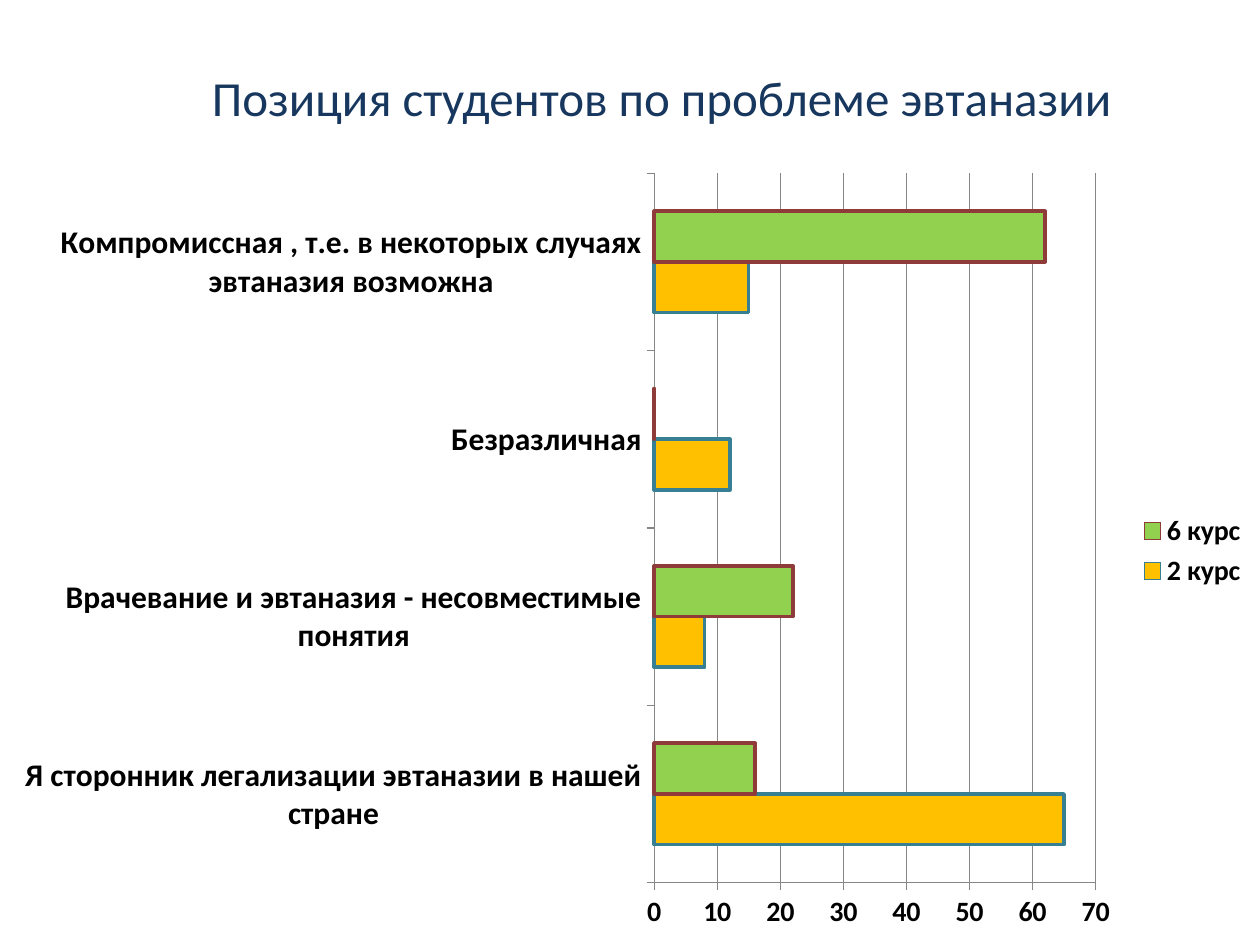
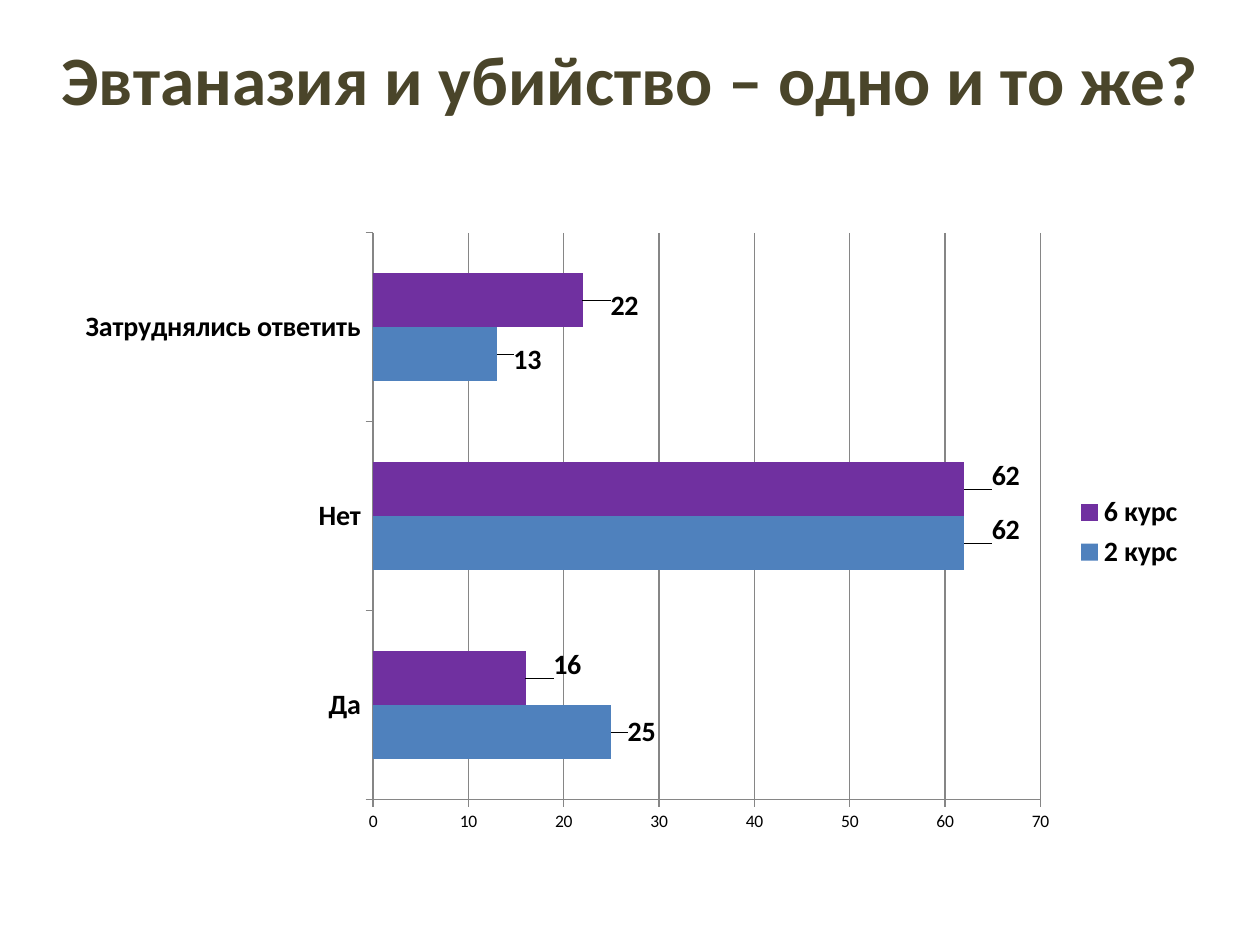
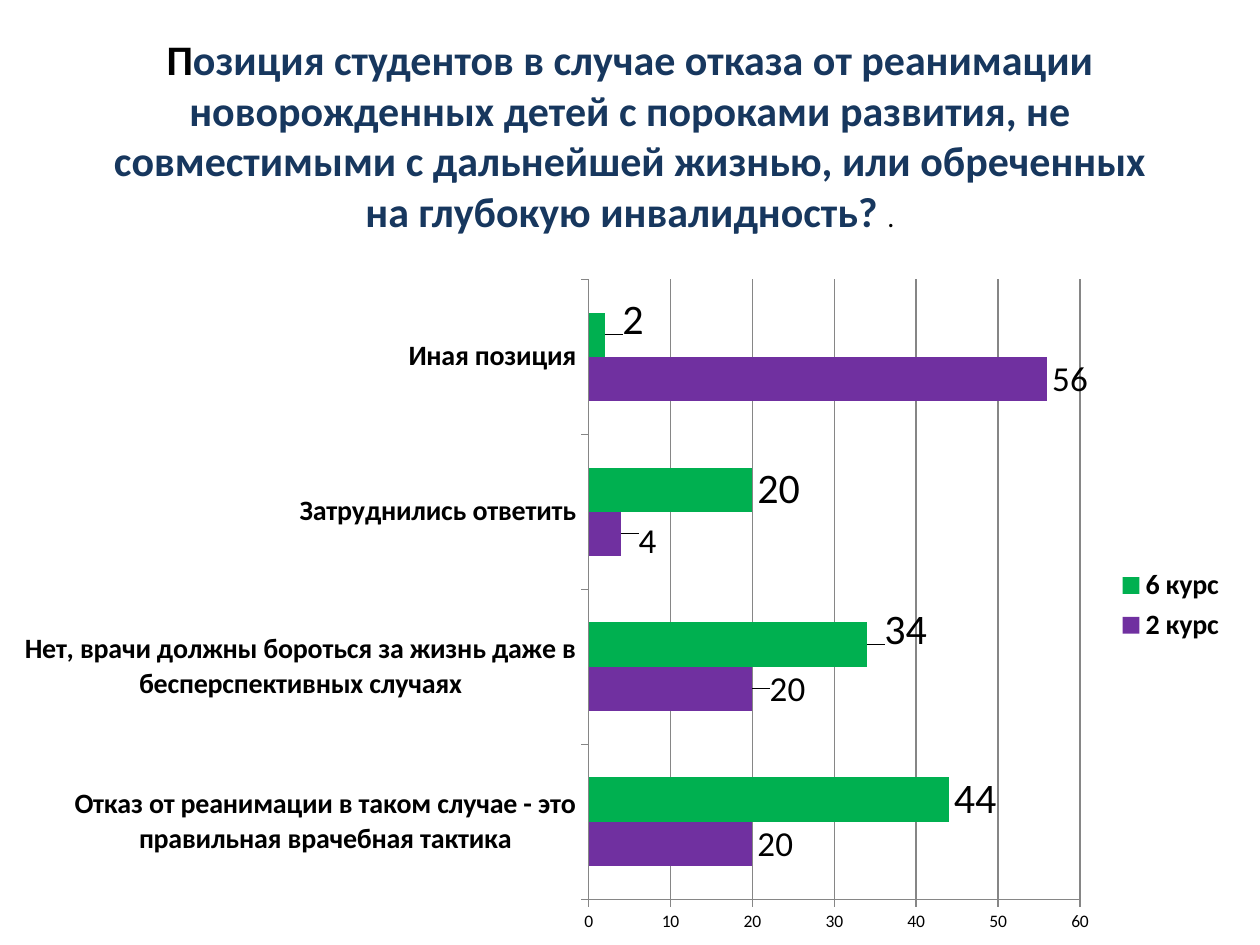
from lxml import etree
from pptx import Presentation
from pptx.chart.data import CategoryChartData
from pptx.dml.color import RGBColor
from pptx.enum import chart as chart_enum, text as text_enum
from pptx.oxml.ns import qn
from pptx.util import Inches, Pt

FONT = "Calibri"
COLORS = {
    "black": "000000", "navy": "17375E", "olive": "4A452A", "grid": "868686",
    "amber": "FFC000", "lime": "92D050", "teal": "377F92", "maroon": "8E3B39",
    "blue": "4F81BD", "purple": "7030A0", "green": "00B050",
}
SECOND_YEAR, SIXTH_YEAR = "2 курс", "6 курс"
PLAIN_AXIS = dict(size=10, bold=False)
LEGEND_FONT = dict(size=16, bold=True)

# Boxes are (left, top, width, height) in inches.
# Label shifts map a point index to (x, y) as fractions of the chart size.
SLIDES = [
    dict(
        title_box=(0.5, 0.31, 9.5, 0.92),
        title=[("Позиция студентов по проблеме эвтаназии",
                dict(size=28, bold=False, color="navy"))],
        chart_box=(0, 1.25, 10, 6.25),
        category_font=dict(size=18, bold=True),
        value_font=dict(size=16, bold=True),
        categories=["Я сторонник легализации эвтаназии в нашей стране",
                    "Врачевание и эвтаназия - несовместимые понятия",
                    "Безразличная",
                    "Компромиссная , т.е. в некоторых случаях эвтаназия возможна"],
        series=[dict(name=SECOND_YEAR, values=(65, 8, 12, 15), fill="amber", line="teal"),
                dict(name=SIXTH_YEAR, values=(16, 22, 0, 62), fill="lime", line="maroon")],
    ),
    dict(
        title_box=(0, 0.16, 10, 0.92),
        title=[("Эвтаназия и убийство – одно и то же?",
                dict(size=39.6, bold=True, color="olive"))],
        chart_box=(0.5, 1.75, 9, 4.95),
        category_font=dict(size=16, bold=True),
        value_font=PLAIN_AXIS,
        categories=["Да", "Нет", "Затруднялись ответить"],
        series=[dict(name=SECOND_YEAR, values=(25, 62, 13), fill="blue",
                     label_font=dict(size=16, bold=True),
                     shifts={0: (0.01, 0), 1: (0.02, -0.02), 2: (0.01, 0.01)}),
                dict(name=SIXTH_YEAR, values=(16, 62, 22), fill="purple",
                     label_font=dict(size=16, bold=True),
                     shifts={0: (0.02, -0.02), 1: (0.02, -0.02), 2: (0.02, 0.01)})],
    ),
    dict(
        title_box=(0.67, 0.21, 8.66, 1.72),
        title=[("П", dict(size=24, bold=True, color="black")),
               ("озиция студентов в случае отказа от реанимации новорожденных детей "
                "с пороками развития, не совместимыми с дальнейшей жизнью, или "
                "обреченных на глубокую инвалидность? ",
                dict(size=24, bold=True, color="navy")),
               (".", dict(size=16, bold=False, color="black"))],
        chart_box=(0, 2.11, 9.83, 5.39),
        category_font=dict(size=16, bold=True),
        value_font=PLAIN_AXIS,
        categories=["Отказ от реанимации в таком случае - это правильная врачебная тактика",
                    "Нет, врачи должны бороться за жизнь даже в бесперспективных случаях",
                    "Затруднились ответить",
                    "Иная позиция"],
        series=[dict(name=SECOND_YEAR, values=(20, 20, 4, 56), fill="purple",
                     label_font=dict(size=20, bold=False),
                     shifts={1: (0.01, 0), 2: (0.01, 0.01)}),
                dict(name=SIXTH_YEAR, values=(44, 34, 20, 2), fill="green",
                     label_font=dict(size=24, bold=False),
                     shifts={1: (0.01, -0.02), 3: (0.01, -0.02)})],
    ),
]


def rgb(name):
    return RGBColor.from_string(COLORS[name])


def format_font(font, size, bold, color="black"):
    for attribute, value in dict(name=FONT, size=Pt(size), bold=bold).items():
        setattr(font, attribute, value)
    font.color.rgb = rgb(color)


def add_title(slide, box, runs):
    title = slide.shapes.title
    title.left, title.top, title.width, title.height = map(Inches, box)
    frame = title.text_frame
    frame.word_wrap = True
    frame.auto_size = text_enum.MSO_AUTO_SIZE.NONE
    frame.vertical_anchor = text_enum.MSO_ANCHOR.MIDDLE
    paragraph = frame.paragraphs[0]
    paragraph.alignment = text_enum.PP_ALIGN.CENTER
    for words, style in runs:
        run = paragraph.add_run()
        run.text = words
        format_font(run.font, **style)


def shift_label(series, index, shift):
    """Move one data label away from its default place at the bar end."""
    label = series._element.xpath(f'c:dLbls/c:dLbl[c:idx/@val="{index}"]')[0]
    layout = etree.Element(qn("c:layout"))
    manual = etree.SubElement(layout, qn("c:manualLayout"))
    for axis, distance in zip("xy", shift):
        etree.SubElement(manual, qn(f"c:{axis}"), val=str(distance))
    label.insert(1, layout)


def format_labels(series, font, shifts):
    labels = series.data_labels
    labels.show_value = True
    labels.position = chart_enum.XL_LABEL_POSITION.OUTSIDE_END
    format_font(labels.font, **font)
    for index, shift in shifts.items():
        label = series.points[index].data_label
        format_font(label.font, **font)
        label.position = chart_enum.XL_LABEL_POSITION.OUTSIDE_END
        shift_label(series, index, shift)


def format_axis(axis, font):
    axis.major_tick_mark = chart_enum.XL_TICK_MARK.OUTSIDE
    axis.minor_tick_mark = chart_enum.XL_TICK_MARK.NONE
    axis.format.line.color.rgb = rgb("grid")
    format_font(axis.tick_labels.font, **font)


def add_bar_chart(slide, content):
    data = CategoryChartData()
    data.categories = content["categories"]
    for entry in content["series"]:
        data.add_series(entry["name"], entry["values"])
    chart = slide.shapes.add_chart(
        chart_enum.XL_CHART_TYPE.BAR_CLUSTERED,
        *map(Inches, content["chart_box"]), data).chart
    format_font(chart.font, **PLAIN_AXIS)
    chart.has_title = False
    chart.has_legend = True
    chart.legend.position = chart_enum.XL_LEGEND_POSITION.RIGHT
    chart.legend.include_in_layout = False
    format_font(chart.legend.font, **LEGEND_FONT)

    format_axis(chart.category_axis, content["category_font"])
    format_axis(chart.value_axis, content["value_font"])
    chart.value_axis.has_major_gridlines = True
    chart.value_axis.major_gridlines.format.line.color.rgb = rgb("grid")

    plot = chart.plots[0]
    plot.gap_width = 150
    plot.vary_by_categories = False
    for series, entry in zip(plot.series, content["series"]):
        series.invert_if_negative = False
        series.format.fill.solid()
        series.format.fill.fore_color.rgb = rgb(entry["fill"])
        if "line" in entry:
            series.format.line.color.rgb = rgb(entry["line"])
            series.format.line.width = Pt(2)
        if "label_font" in entry:
            format_labels(series, entry["label_font"], entry["shifts"])


def main():
    presentation = Presentation()
    presentation.slide_width, presentation.slide_height = Inches(10), Inches(7.5)
    title_only = presentation.slide_layouts[5]
    for content in SLIDES:
        slide = presentation.slides.add_slide(title_only)
        add_title(slide, content["title_box"], content["title"])
        add_bar_chart(slide, content)
    presentation.save("out.pptx")


if __name__ == "__main__":
    main()
